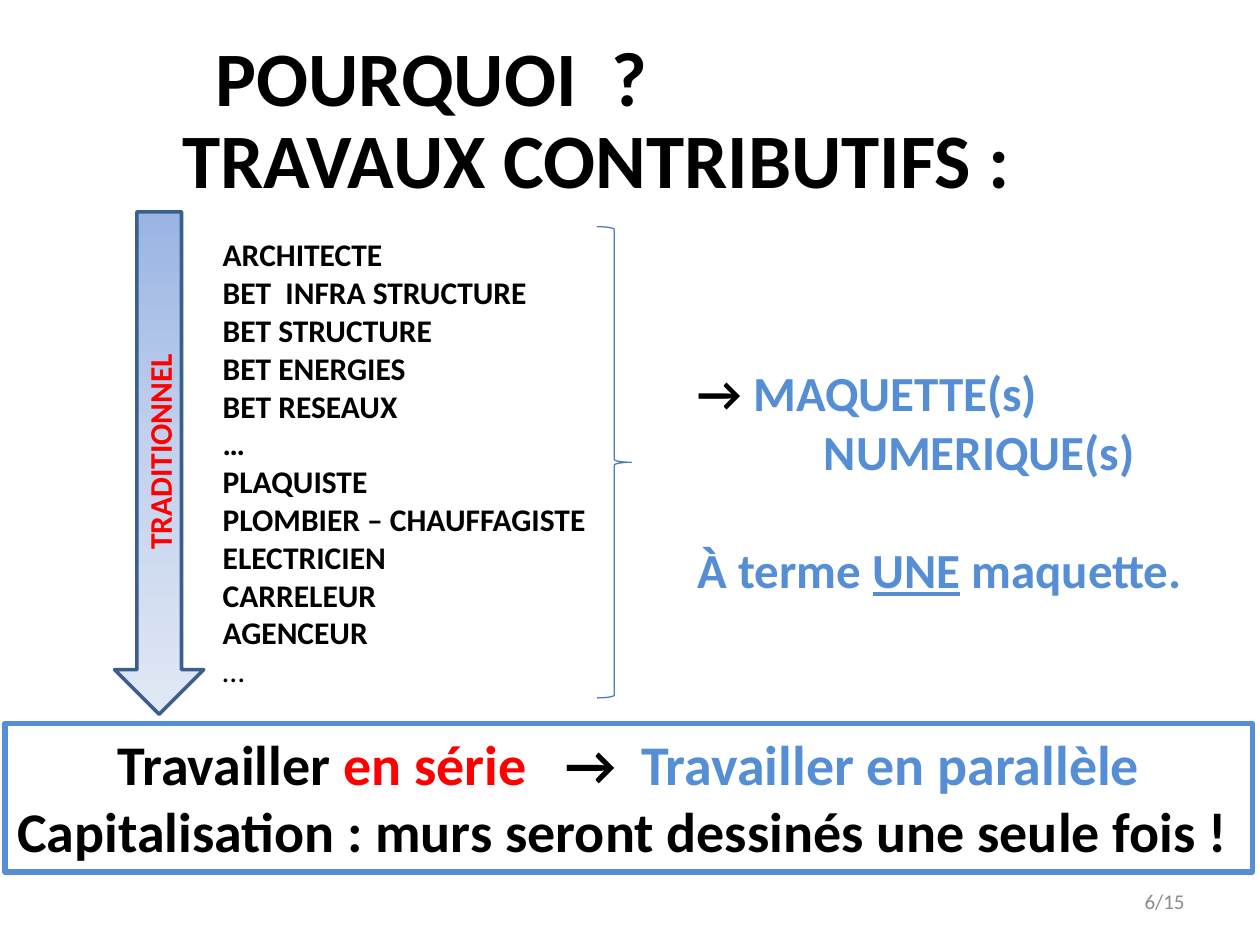
from copy import deepcopy
from dataclasses import dataclass, field
from typing import Any

from pptx import Presentation
from pptx.dml.color import RGBColor
from pptx.enum.shapes import MSO_SHAPE
from pptx.enum.text import MSO_ANCHOR, MSO_AUTO_SIZE, PP_ALIGN
from pptx.oxml.ns import qn
from pptx.util import Cm, Pt

BLACK = RGBColor(0x00, 0x00, 0x00)
RED = RGBColor(0xFF, 0x00, 0x00)
BLUE = RGBColor(0x55, 0x8E, 0xD5)
GREY = RGBColor(0x8C, 0x8C, 0x8C)
BRACE_BLUE = RGBColor(0x4B, 0x7E, 0xBC)
ARROW_OUTLINE = RGBColor(0x3A, 0x5F, 0x8C)
ARROW_GRADIENT = (
    (0, RGBColor(0x9A, 0xB5, 0xE4)),
    (0.47, RGBColor(0xC2, 0xD1, 0xED)),
    (1, RGBColor(0xE1, 0xE8, 0xF5)),
)
GROWING_FRAME = {"word_wrap": False, "auto_size": MSO_AUTO_SIZE.SHAPE_TO_FIT_TEXT,
                 "vertical_anchor": MSO_ANCHOR.TOP}
FIXED_FRAME = {"word_wrap": True, "vertical_anchor": MSO_ANCHOR.MIDDLE}


@dataclass(frozen=True)
class Box:
    left: float
    top: float
    width: float
    height: float

    def lengths(self) -> tuple[Cm, Cm, Cm, Cm]:
        return Cm(self.left), Cm(self.top), Cm(self.width), Cm(self.height)


@dataclass(frozen=True)
class Run:
    text: str
    color: RGBColor = BLACK
    bold: bool = True
    underline: bool = False


@dataclass(frozen=True)
class Line:
    runs: tuple[Run, ...]
    format: dict[str, Any] = field(default_factory=dict)
    indent: float = 0


def set_attributes(target: Any, values: dict[str, Any]) -> None:
    for name, value in values.items():
        setattr(target, name, value)


def write_lines(shape: Any, lines: list[Line], size: float, frame_format: dict[str, Any]) -> None:
    frame = shape.text_frame
    set_attributes(frame, frame_format)
    for index, line in enumerate(lines):
        paragraph = frame.add_paragraph() if index else frame.paragraphs[0]
        set_attributes(paragraph, {"alignment": PP_ALIGN.LEFT} | line.format)
        if line.indent:
            paragraph._p.get_or_add_pPr().set("marL", str(Cm(line.indent)))
        for run in line.runs:
            text_run = paragraph.add_run()
            text_run.text = run.text
            set_attributes(text_run.font, {"name": "Calibri", "size": Pt(size),
                                           "bold": run.bold, "underline": run.underline})
            text_run.font.color.rgb = run.color


def add_text(slide: Any, box: Box, lines: list[Line], size: float,
             frame_format: dict[str, Any] = GROWING_FRAME) -> None:
    write_lines(slide.shapes.add_textbox(*box.lengths()), lines, size, frame_format)


def add_outline(slide: Any, kind: MSO_SHAPE, box: Box, color: RGBColor, width: float) -> Any:
    shape = slide.shapes.add_shape(kind, *box.lengths())
    shape.shadow.inherit = False
    shape.fill.background()
    shape.line.color.rgb = color
    shape.line.width = Pt(width)
    return shape


def fill_gradient(shape: Any, stops: tuple[tuple[float, RGBColor], ...]) -> None:
    shape.fill.gradient()
    shape.fill.gradient_angle = 270
    stop_list = shape._element.spPr.find(qn("a:gradFill")).find(qn("a:gsLst"))
    while len(stop_list) < len(stops):
        stop_list.append(deepcopy(stop_list[0]))
    for stop, (position, color) in zip(shape.fill.gradient_stops, stops):
        stop.position = position
        stop.color.rgb = color


def main() -> None:
    """Build the slide on contributive work and save it."""
    presentation = Presentation()
    presentation.slide_width, presentation.slide_height = Cm(25.4), Cm(19.05)
    slide = presentation.slides.add_slide(presentation.slide_layouts[6])
    centred = {"alignment": PP_ALIGN.CENTER}

    add_text(slide, Box(3.35, 2.13, 17.35, 2.13),
             [Line((Run("TRAVAUX CONTRIBUTIFS :"),), centred)], 44)
    add_text(slide, Box(4.09, 0.48, 9.32, 2.13), [Line((Run("POURQUOI  ?"),))], 44)

    conclusion = add_outline(slide, MSO_SHAPE.RECTANGLE, Box(0.1, 14.58, 25.15, 3), BLUE, 3)
    write_lines(conclusion, [
        Line((Run("Travailler "), Run("en série   ", RED), Run("→  "),
              Run("Travailler en parallèle", BLUE)), centred),
        Line((Run("Capitalisation : murs seront dessinés une seule fois !"),)),
    ], 32, GROWING_FRAME)

    trades = ["ARCHITECTE", "BET  INFRA STRUCTURE", "BET STRUCTURE", "BET ENERGIES",
              "BET RESEAUX", "…", "PLAQUISTE", "PLOMBIER – CHAUFFAGISTE",
              "ELECTRICIEN", "CARRELEUR", "AGENCEUR"]
    trade_lines = [Line((Run(trade),)) for trade in trades]
    add_text(slide, Box(4.24, 4.62, 7.9, 9.5),
             trade_lines + [Line((Run("…", bold=False),))], 18)
    add_outline(slide, MSO_SHAPE.RIGHT_BRACE, Box(12.04, 4.57, 0.69, 9.5), BRACE_BLUE, 0.75)

    add_text(slide, Box(13.82, 7.19, 10.64, 5.05), [
        Line((Run("→ "), Run("MAQUETTE(s)", BLUE))),
        Line((Run("NUMERIQUE(s)", BLUE),), indent=2.54),
        Line((Run("À terme ", BLUE), Run("UNE", BLUE, underline=True),
              Run(" maquette.", BLUE)), {"space_before": Pt(34)}),
    ], 28)

    arrow = add_outline(slide, MSO_SHAPE.DOWN_ARROW, Box(2.31, 4.27, 1.8, 10.13),
                        ARROW_OUTLINE, 2)
    fill_gradient(arrow, ARROW_GRADIENT)
    write_lines(arrow, [Line((Run("TRADITIONNEL", RED),), centred)], 18, FIXED_FRAME)
    arrow.text_frame._txBody.bodyPr.set("vert", "vert270")

    add_text(slide, Box(18.21, 17.65, 5.92, 1.02),
             [Line((Run("6/15", GREY, bold=False),), {"alignment": PP_ALIGN.RIGHT})],
             12, FIXED_FRAME)

    presentation.save("out.pptx")


if __name__ == "__main__":
    main()
